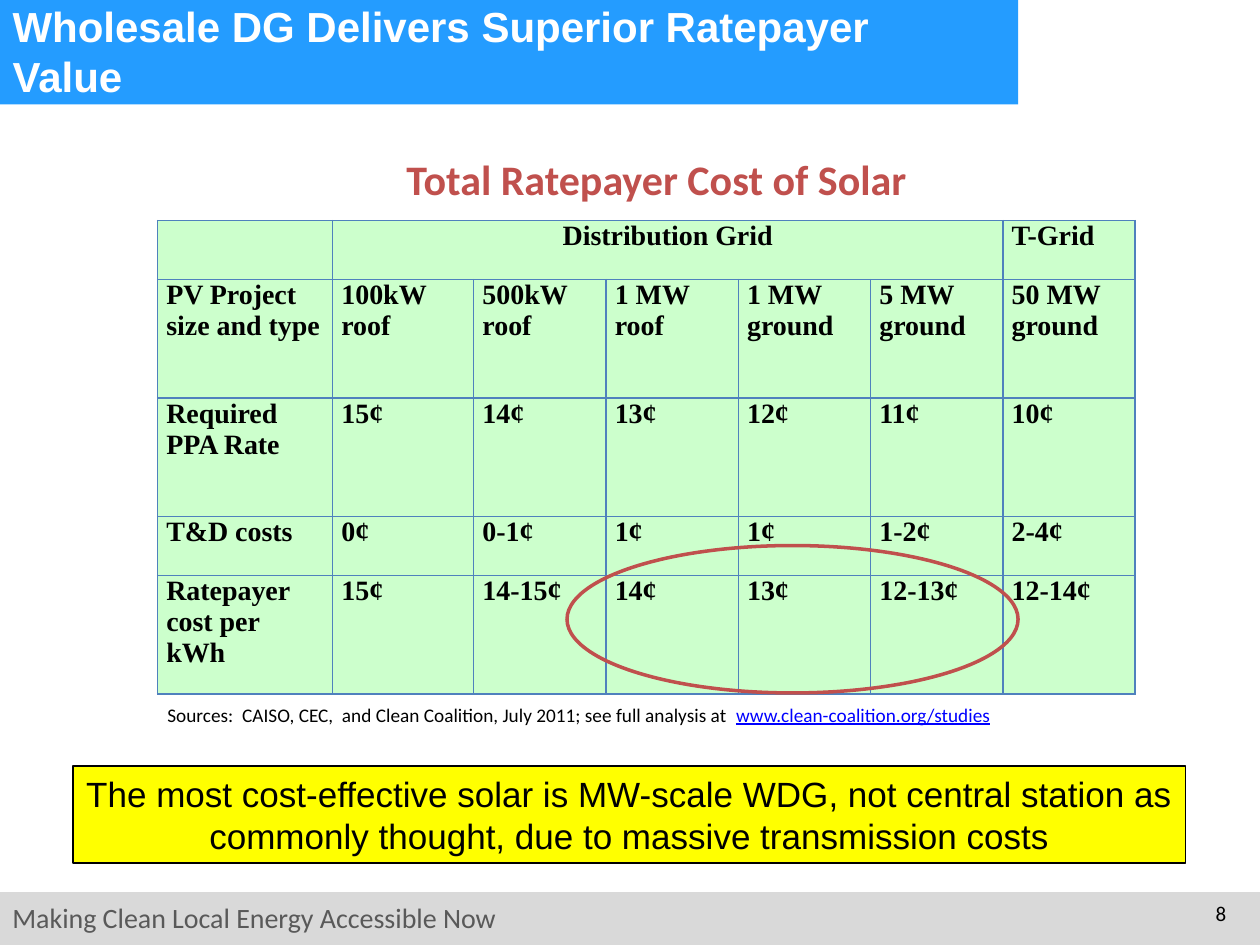
"""Build the slide comparing the total ratepayer cost of solar projects."""
from typing import NamedTuple, Optional

from lxml.etree import SubElement
from pptx import Presentation
from pptx.dml.color import RGBColor
from pptx.enum.shapes import MSO_SHAPE as Preset
from pptx.enum.text import MSO_ANCHOR as Anchor, PP_ALIGN as Align
from pptx.oxml.ns import qn
from pptx.util import Inches, Pt

COLORS = {
    "band": "249CFF", "footer": "D9D9D9", "footer_text": "595959",
    "callout": "FFFF00", "cell": "CCFFCC", "border": "4F81BD",
    "accent": "C0504D", "link": "0000FF", "black": "000000", "white": "FFFFFF",
}


class Box(NamedTuple):
    left: float
    top: float
    width: float
    height: float

    def lengths(self) -> list:
        return [Inches(value) for value in self]


class Panel(NamedTuple):
    box: Box
    preset: Preset = Preset.RECTANGLE
    fill: Optional[str] = None
    line: Optional[str] = None
    weight: float = 0.75


COST_ROWS = [
    ["", "Distribution Grid", "", "", "", "", "T-Grid"],
    ["PV Project size and type", "100kW roof", "500kW roof", "1 MW roof",
     "1 MW ground", "5 MW ground", "50 MW ground"],
    ["Required PPA Rate", "15¢", "14¢", "13¢", "12¢", "11¢", "10¢"],
    ["T&D costs", "0¢", "0-1¢", "1¢", "1¢", "1-2¢", "2-4¢"],
    ["Ratepayer cost per kWh", "15¢", "14-15¢", "14¢", "13¢", "12-13¢", "12-14¢"],
]
COLUMN_WIDTHS = [1.39, 1.12] + [1.05] * 5
ROW_HEIGHTS = [0.47, 0.94, 0.94, 0.47, 0.94]


def rgb(name: str) -> RGBColor:
    return RGBColor.from_string(COLORS[name])


def write(frame, text: str, *, size: float, font: str = "Calibri",
          color: str = "black", bold: bool = False, underline: bool = False,
          align: Align = Align.LEFT, wrap: bool = True) -> None:
    """Append a formatted run to the first paragraph of a text frame."""
    frame.word_wrap = wrap
    paragraph = frame.paragraphs[0]
    paragraph.alignment = align
    run = paragraph.add_run()
    run.text = text
    run.font.name, run.font.size = font, Pt(size)
    run.font.bold, run.font.underline = bold, underline
    run.font.color.rgb = rgb(color)


def draw_panel(slide, panel: Panel):
    shape = slide.shapes.add_shape(panel.preset, *panel.box.lengths())
    shape.shadow.inherit = False
    if panel.fill:
        shape.fill.solid()
        shape.fill.fore_color.rgb = rgb(panel.fill)
    else:
        shape.fill.background()
    if panel.line:
        shape.line.color.rgb = rgb(panel.line)
        shape.line.width = Pt(panel.weight)
    else:
        shape.line.fill.background()
    return shape


def add_label(slide, box: Box, text: str, **style):
    frame = slide.shapes.add_textbox(*box.lengths()).text_frame
    write(frame, text, **style)
    return frame


def style_cell(cell) -> None:
    """Give a cell its borders, fill and margins."""
    properties = cell._tc.get_or_add_tcPr()
    for side in ("a:lnL", "a:lnR", "a:lnT", "a:lnB"):
        edge = SubElement(properties, qn(side), w=str(Pt(1)))
        edge_fill = SubElement(edge, qn("a:solidFill"))
        SubElement(edge_fill, qn("a:srgbClr"), val=COLORS["border"])
    cell.fill.solid()
    cell.fill.fore_color.rgb = rgb("cell")
    cell.margin_left = cell.margin_right = Inches(0.07)
    cell.margin_top = cell.margin_bottom = 0


def draw_cost_table(slide, box: Box) -> None:
    costs = slide.shapes.add_table(
        len(ROW_HEIGHTS), len(COLUMN_WIDTHS), *box.lengths()).table
    for column, width in zip(costs.columns, COLUMN_WIDTHS):
        column.width = Inches(width)
    for row, height in zip(costs.rows, ROW_HEIGHTS):
        row.height = Inches(height)
    costs.cell(0, 1).merge(costs.cell(0, 5))
    for row_index, entries in enumerate(COST_ROWS):
        for column_index, entry in enumerate(entries):
            cell = costs.cell(row_index, column_index)
            style_cell(cell)
            if entry:
                write(cell.text_frame, entry, size=16, font="Times New Roman", bold=True,
                      align=Align.CENTER if cell.is_merge_origin else Align.LEFT)


def place_title(slide, box: Box, text: str) -> None:
    """Fill the title placeholder and bring it in front of its band."""
    title = slide.shapes.title
    title.left, title.top, title.width, title.height = box.lengths()
    title.text_frame.vertical_anchor = Anchor.MIDDLE
    write(title.text_frame, text, size=24, font="Arial", color="white", bold=True, wrap=False)
    slide.shapes._spTree.append(title._element)


def main() -> None:
    deck = Presentation()
    deck.slide_width, deck.slide_height = Inches(10), Inches(7.5)
    slide = deck.slides.add_slide(deck.slide_layouts[5])

    draw_panel(slide, Panel(Box(0, 7.08, 10, 0.42), fill="footer"))
    add_label(slide, Box(0, 7.1, 5.17, 0.37), "Making Clean Local Energy Accessible Now",
              size=16, color="footer_text")
    draw_panel(slide, Panel(Box(0, 0, 8.08, 0.83), fill="band"))
    add_label(slide, Box(9.33, 7.1, 0.5, 0.4), "8", size=12, align=Align.RIGHT)
    place_title(slide, Box(0, 0.08, 7, 0.64),
                "Wholesale DG Delivers Superior Ratepayer Value")

    callout = draw_panel(slide, Panel(Box(0.58, 6.08, 8.83, 0.77),
                                      fill="callout", line="black"))
    write(callout.text_frame,
          "The most cost-effective solar is MW-scale WDG, not central station as "
          "commonly thought, due to massive transmission costs",
          size=20, font="Arial", align=Align.CENTER)

    draw_cost_table(slide, Box(1.25, 1.75, 7.75, 3.75))
    sources = add_label(
        slide, Box(1.23, 5.53, 7.77, 0.47),
        "Sources:  CAISO, CEC,  and Clean Coalition, July 2011; see full analysis at  ",
        size=11)
    write(sources, "www.clean-coalition.org/studies", size=11, color="link", underline=True)
    add_label(slide, Box(2.75, 1.17, 4.92, 0.51), "Total Ratepayer Cost of Solar",
              size=24, color="accent", bold=True, align=Align.CENTER)
    draw_panel(slide, Panel(Box(4.5, 4.33, 3.58, 1.17), Preset.OVAL,
                            line="accent", weight=2))
    deck.save("out.pptx")


if __name__ == "__main__":
    main()
